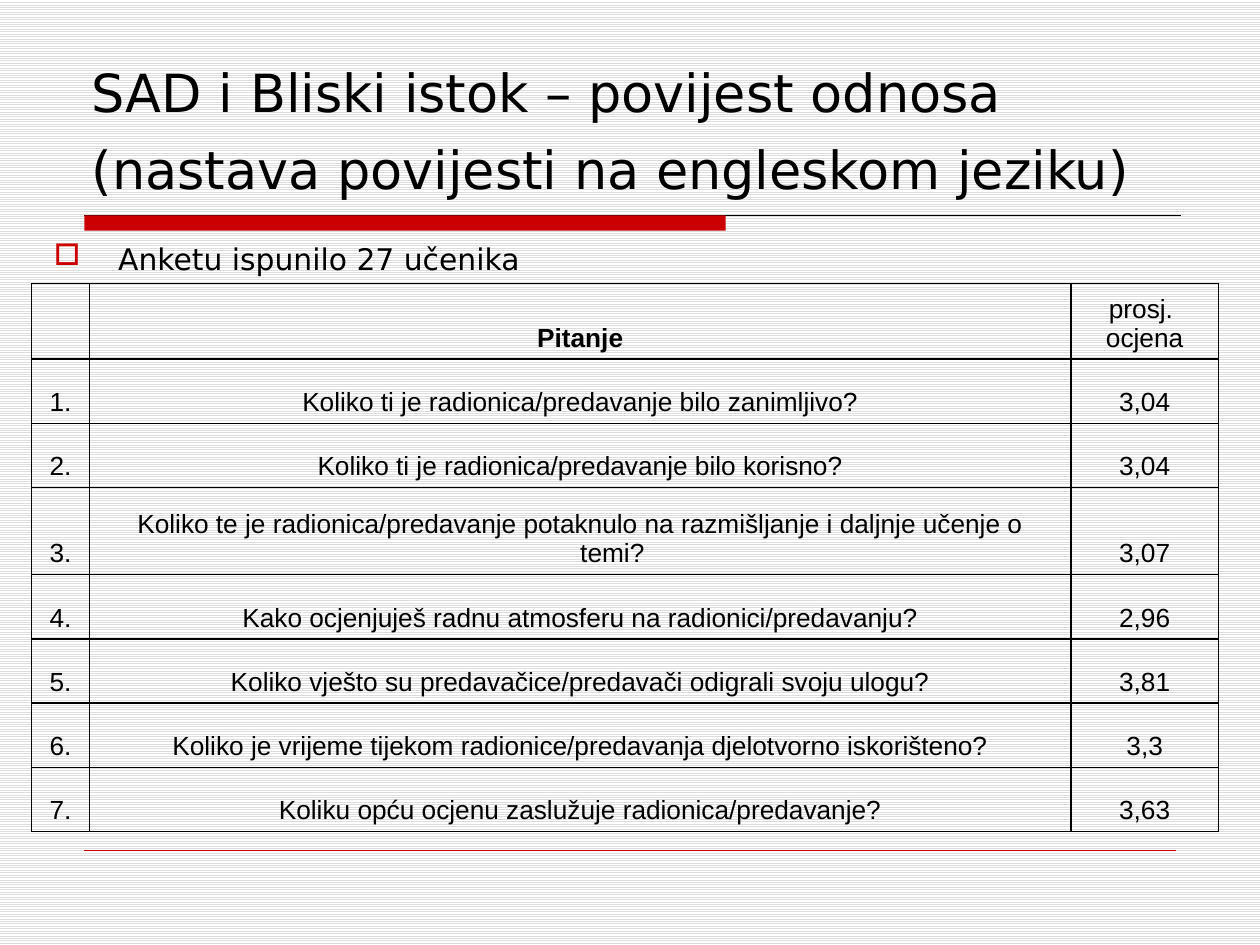
import pptx
import pptx.util
import pptx.dml.color
import pptx.enum.dml
import pptx.enum.shapes
import pptx.enum.text
import pptx.oxml
import pptx.oxml.ns

Inches, Pt = pptx.util.Inches, pptx.util.Pt
RGBColor = pptx.dml.color.RGBColor
ANCHOR, ALIGN = pptx.enum.text.MSO_ANCHOR, pptx.enum.text.PP_ALIGN

# Content
TITLE = "SAD i Bliski istok – povijest odnosa (nastava povijesti na engleskom jeziku)"
NOTE = "Anketu ispunilo 27 učenika"
HEADER = ("", "Pitanje", "prosj. \nocjena")
RATINGS = [
    ("Koliko ti je radionica/predavanje bilo zanimljivo?", "3,04"),
    ("Koliko ti je radionica/predavanje bilo korisno?", "3,04"),
    ("Koliko te je radionica/predavanje potaknulo na razmišljanje i daljnje učenje o temi?", "3,07"),
    ("Kako ocjenjuješ radnu atmosferu na radionici/predavanju?", "2,96"),
    ("Koliko vješto su predavačice/predavači odigrali svoju ulogu?", "3,81"),
    ("Koliko je vrijeme tijekom radionice/predavanja djelotvorno iskorišteno?", "3,3"),
    ("Koliku opću ocjenu zaslužuje radionica/predavanje?", "3,63"),
]
ROWS = [HEADER] + [(f"{n}.", *rating) for n, rating in enumerate(RATINGS, 1)]

# Style
BLACK, WHITE = RGBColor(0, 0, 0), RGBColor(0xFF, 0xFF, 0xFF)
RED, STRIPE = RGBColor(0xCC, 0, 0), RGBColor(0xDD, 0xDD, 0xDD)
HEAD_FONT, TABLE_FONT = "DejaVu Sans", "Arial"
COLS = (0.46, 7.79, 1.17)
HEADER_H, ROW_H, TALL_ROW_H, TALL_ROW = 0.58, 0.51, 0.69, 3
RULE_LEFT, RULE_RIGHT, RULE_TOP = 0.67, 9.37, 1.71


def xml(parent, body):
    ns = pptx.oxml.ns.nsdecls("a")
    parent.append(pptx.oxml.parse_xml(body.replace("/>", f" {ns}/>", 1) if body.count("<") == 1
                                      else body.replace(">", f" {ns}>", 1)))


def style(run, size, font, bold=False):
    run.font.size, run.font.name, run.font.bold = Pt(size), font, bold
    run.font.color.rgb = BLACK


def hang(p):
    pPr = p._p.get_or_add_pPr()
    pPr.set("marL", str(Inches(0.51)))
    pPr.set("indent", str(Inches(-0.51)))
    return pPr


def text_box(s, left, top, width, height, text, size, anchor):
    tf = s.shapes.add_textbox(*map(Inches, (left, top, width, height))).text_frame
    tf.word_wrap, tf.vertical_anchor = True, anchor
    tf.text = text
    p = tf.paragraphs[0]
    style(p.runs[0], size, HEAD_FONT)
    return p


def rule(s, left, right, y, color, weight):
    line = s.shapes.add_connector(pptx.enum.shapes.MSO_CONNECTOR.STRAIGHT,
                                  *map(Inches, (left, y, right, y)))
    line.line.color.rgb, line.line.width = color, Pt(weight)
    xml(line._element.spPr, "<a:effectLst/>")


def fill_cell(cell, text, bold):
    cell.fill.background()
    cell.vertical_anchor = ANCHOR.BOTTOM
    cell.text = text
    for p in cell.text_frame.paragraphs:
        p.alignment = ALIGN.CENTER
        hang(p)
        for r in p.runs:
            style(r, 15, TABLE_FONT, bold)
    # Borders come before the fill in the cell properties
    tcPr = cell._tc.get_or_add_tcPr()
    fill = tcPr[0]
    for side in "LRTB":
        xml(tcPr, f'<a:ln{side} w="{Pt(1)}"><a:solidFill><a:srgbClr val="{BLACK}"/>'
                  f"</a:solidFill></a:ln{side}>")
    tcPr.append(fill)


prs = pptx.Presentation()
prs.slide_width, prs.slide_height = Inches(10), Inches(7.5)
s = prs.slides.add_slide(prs.slide_layouts[6])

# Striped background
bg = s.background.fill
bg.patterned()
bg.pattern = pptx.enum.dml.MSO_PATTERN.LIGHT_HORIZONTAL
bg.fore_color.rgb, bg.back_color.rgb = STRIPE, WHITE

# Red bar and rules
rule(s, RULE_LEFT, RULE_RIGHT, RULE_TOP, BLACK, 0.75)
bar = s.shapes.add_shape(pptx.enum.shapes.MSO_SHAPE.RECTANGLE,
                         *map(Inches, (RULE_LEFT, RULE_TOP, 5.09, 0.12)))
bar.shadow.inherit = False
bar.fill.solid()
bar.fill.fore_color.rgb = RED
bar.line.fill.background()
rule(s, RULE_LEFT, 9.33, 6.75, RED, 0.25)

# Title, with a larger trailing space that opens up its last line
p = text_box(s, 0.63, 0.33, 8.75, 1.33, TITLE, 30, ANCHOR.BOTTOM)
r = p.add_run()
r.text = " "
style(r, 38, HEAD_FONT)

# Bulleted note
p = text_box(s, 0.33, 1.92, 9, 0.33, NOTE, 17, ANCHOR.TOP)
p.line_spacing, p.space_before = 0.8, Pt(3.4)
pPr = hang(p)
xml(pPr, f'<a:buClr><a:srgbClr val="{RED}"/></a:buClr>')
xml(pPr, '<a:buChar char="□"/>')

# Ratings table
heights = [HEADER_H] + [TALL_ROW_H if n == TALL_ROW else ROW_H for n in range(1, len(ROWS))]
table = s.shapes.add_table(len(ROWS), len(COLS), *map(
    Inches, (0.25, 2.25, sum(COLS), sum(heights)))).table
table.first_row = table.horz_banding = False
for col, width in zip(table.columns, COLS):
    col.width = Inches(width)
for i, (row, height) in enumerate(zip(ROWS, heights)):
    table.rows[i].height = Inches(height)
    for j, text in enumerate(row):
        fill_cell(table.cell(i, j), text, bold=text == "Pitanje")

prs.save("out.pptx")
